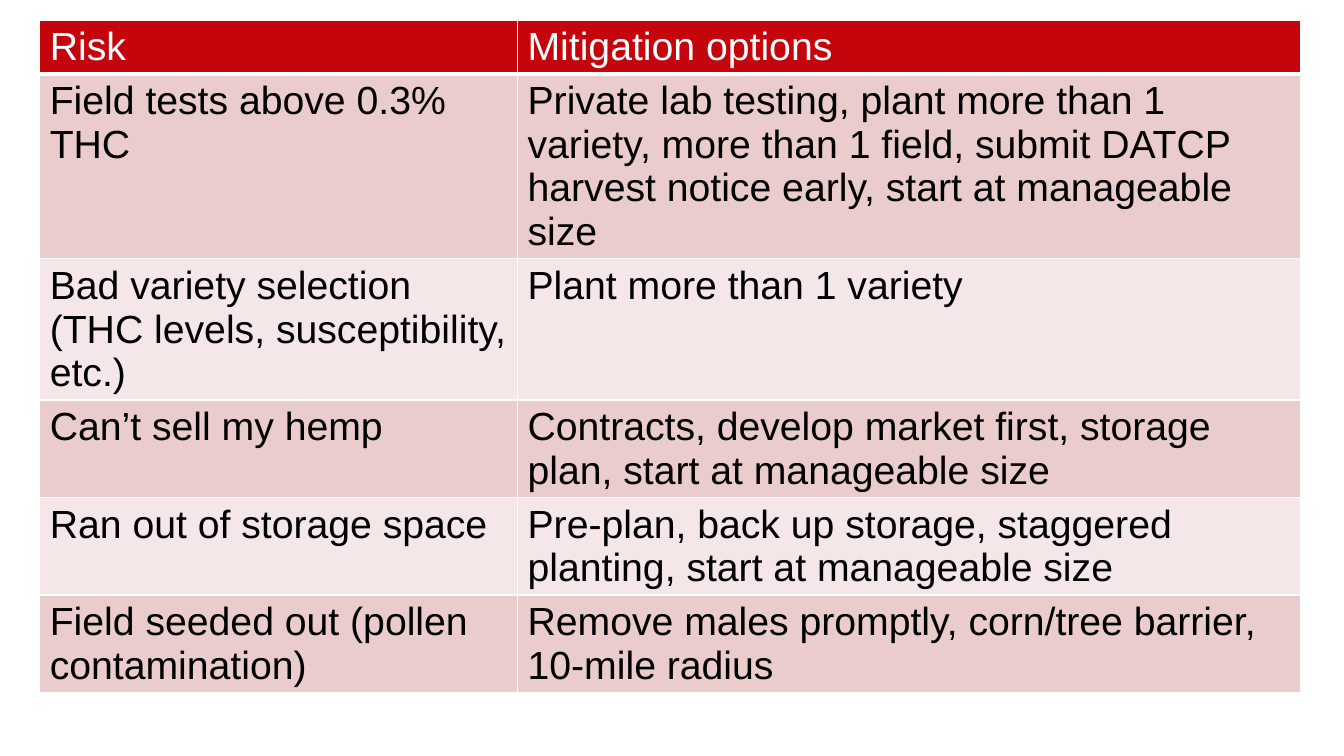
from lxml import etree
from pptx import Presentation
from pptx.dml.color import RGBColor
from pptx.oxml.ns import qn
from pptx.util import Pt

# Each row: risk, mitigation options, lines of text in its tallest cell
ROWS = [
    ("Risk", "Mitigation options", 1),
    ("Field tests above 0.3% THC",
     "Private lab testing, plant more than 1 variety, more than 1 field, "
     "submit DATCP harvest notice early, start at manageable size", 4),
    ("Bad variety selection (THC levels, susceptibility, etc.)",
     "Plant more than 1 variety", 3),
    ("Can’t sell my hemp",
     "Contracts, develop market first, storage plan, start at manageable size", 2),
    ("Ran out of storage space",
     "Pre-plan, back up storage, staggered planting, start at manageable size", 2),
    ("Field seeded out (pollen contamination)",
     "Remove males promptly, corn/tree barrier, 10-mile radius", 2),
]
COLORS = {"header": "C5050C", "odd": "EACCCC", "even": "F5E7E7",
          "border": "FFFFFF", "header_text": "FFFFFF", "body_text": "000000"}
FONT = {"name": "Arial", "size": Pt(28)}
LEFT, TOP = 28.4, 14.4
COL_WIDTHS = [341.3, 559.4]
LINE_HEIGHT, CELL_PADDING = 31, 7


def set_borders(cell, bottom):
    """Draw 1 pt borders, with the given width in points at the bottom."""
    tc_pr = cell._tc.get_or_add_tcPr()
    widths = {"a:lnL": 1, "a:lnR": 1, "a:lnT": 1, "a:lnB": bottom}
    for i, (tag, width) in enumerate(widths.items()):
        ln = etree.Element(qn(tag), w=str(Pt(width)))
        fill = etree.SubElement(ln, qn("a:solidFill"))
        etree.SubElement(fill, qn("a:srgbClr"), val=COLORS["border"])
        tc_pr.insert(i, ln)


def fill_cell(cell, words, row):
    band = "header" if row == 0 else "odd" if row % 2 else "even"
    cell.fill.solid()
    cell.fill.fore_color.rgb = RGBColor.from_string(COLORS[band])
    set_borders(cell, bottom=3 if row == 0 else 1)
    r = cell.text_frame.paragraphs[0].add_run()
    r.text = words
    for name, value in FONT.items():
        setattr(r.font, name, value)
    r.font.bold = False
    text_color = COLORS["body_text" if row else "header_text"]
    r.font.color.rgb = RGBColor.from_string(text_color)


def main():
    prs = Presentation()
    prs.slide_width, prs.slide_height = Pt(960), Pt(540)
    s = prs.slides.add_slide(prs.slide_layouts[6])
    heights = [lines * LINE_HEIGHT + CELL_PADDING for *_, lines in ROWS]
    table = s.shapes.add_table(len(ROWS), len(COL_WIDTHS), Pt(LEFT), Pt(TOP),
                               Pt(sum(COL_WIDTHS)), Pt(sum(heights))).table
    for column, width in zip(table.columns, COL_WIDTHS):
        column.width = Pt(width)
    for i, (*texts, _) in enumerate(ROWS):
        table.rows[i].height = Pt(heights[i])
        for j, words in enumerate(texts):
            fill_cell(table.cell(i, j), words, i)
    prs.save("out.pptx")


if __name__ == "__main__":
    main()
